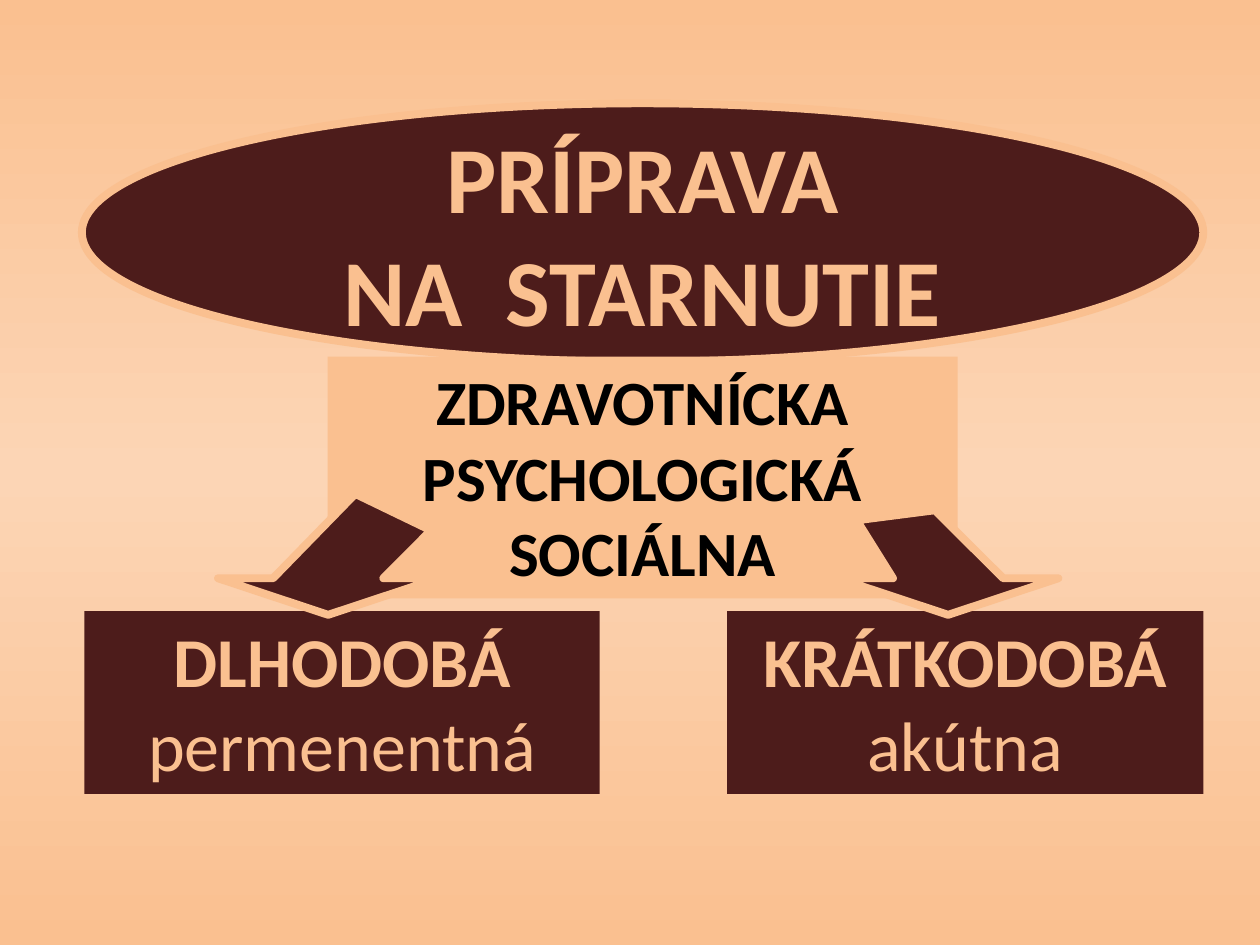
from copy import deepcopy

from pptx import Presentation
from pptx.dml.color import RGBColor
from pptx.enum.shapes import MSO_SHAPE as SHAPE
from pptx.enum.text import MSO_ANCHOR as ANCHOR, MSO_AUTO_SIZE as AUTO, PP_ALIGN as ALIGN
from pptx.oxml.ns import qn
from pptx.util import Inches, Pt

COLORS = {"dark": "4D1C1B", "peach": "FAC090", "light": "FCD5B5", "black": "000000"}


def rgb(name):
    return RGBColor.from_string(COLORS[name])


def style(sp, fill, line=None):
    sp.shadow.inherit = False
    sp.fill.solid()
    sp.fill.fore_color.rgb = rgb(fill)
    if line:
        sp.line.color.rgb = rgb(line)
        sp.line.width = Pt(4.5)
    else:
        sp.line.fill.background()


def add_run(p, text, size=40, color="peach", bold=True):
    r = p.add_run()
    r.text = text
    r.font.name = "Calibri"
    r.font.size = Pt(size)
    r.font.bold = bold
    r.font.color.rgb = rgb(color)


def add_panel(s, box, paragraphs, kind=SHAPE.RECTANGLE, fill="dark", line=None,
              anchor=ANCHOR.TOP, auto_size=AUTO.SHAPE_TO_FIT_TEXT):
    sp = s.shapes.add_shape(kind, *map(Inches, box))
    style(sp, fill, line)
    tf = sp.text_frame
    tf.word_wrap = True
    tf.auto_size = auto_size
    tf.vertical_anchor = anchor
    for i, runs in enumerate(paragraphs):
        p = tf.paragraphs[0] if i == 0 else tf.add_paragraph()
        p.alignment = ALIGN.CENTER
        for text, fmt in runs:
            add_run(p, text, **fmt)


def add_title(s, box):
    lines = [[(text, {"size": 54})] for text in ("PRÍPRAVA", "NA  STARNUTIE")]
    add_panel(s, box, lines, kind=SHAPE.OVAL, line="peach",
              anchor=ANCHOR.MIDDLE, auto_size=AUTO.NONE)


def add_areas(s, box):
    areas = ("ZDRAVOTNÍCKA", "PSYCHOLOGICKÁ", "SOCIÁLNA")
    add_panel(s, box, [[(text, {"size": 36, "color": "black"})] for text in areas],
              fill="peach")


def add_arrow(s, box, tail_left, tail_right):
    left, top, width, height = box
    right, bottom = left + width, top + height
    neck = bottom - 0.29
    points = [(left, neck), (left + width / 4, neck), tail_left, tail_right,
              (right - width / 4, neck), (right, neck), (left + width / 2, bottom)]
    start, *rest = [(Inches(x), Inches(y)) for x, y in points]
    builder = s.shapes.build_freeform(*start)
    builder.add_line_segments(rest, close=True)
    style(builder.convert_to_shape(), "dark", "peach")


def set_background(s):
    fill = s.background.fill
    fill.gradient()
    fill.gradient_angle = 270
    stops = next(s.element.iter(qn("a:gsLst")))
    stops.insert(1, deepcopy(stops[0]))
    for stop, (position, color) in zip(
            fill.gradient_stops, ((0, "peach"), (0.5, "light"), (1, "peach"))):
        stop.position = position
        stop.color.rgb = rgb(color)


def main():
    prs = Presentation()
    prs.slide_width, prs.slide_height = Inches(10), Inches(7.5)
    s = prs.slides.add_slide(prs.slide_layouts[6])
    set_background(s)
    add_title(s, (0.65, 0.82, 8.9, 2.05))
    add_panel(s, (0.67, 4.85, 4.09, 1.45),
              [[("DLHODOBÁ ", {}), ("permenentná", {"bold": False})]])
    add_panel(s, (5.77, 4.85, 3.78, 1.45),
              [[("KRÁTKODOBÁ", {})], [("akútna", {"bold": False})]])
    add_areas(s, (2.6, 2.83, 5, 1.92))
    add_arrow(s, (6.65, 4.05, 1.75, 0.83), (6.8, 4.13), (7.42, 4.05))
    add_arrow(s, (1.73, 3.92, 1.75, 0.96), (2.82, 3.92), (3.42, 4.21))
    prs.save("out.pptx")


if __name__ == "__main__":
    main()
